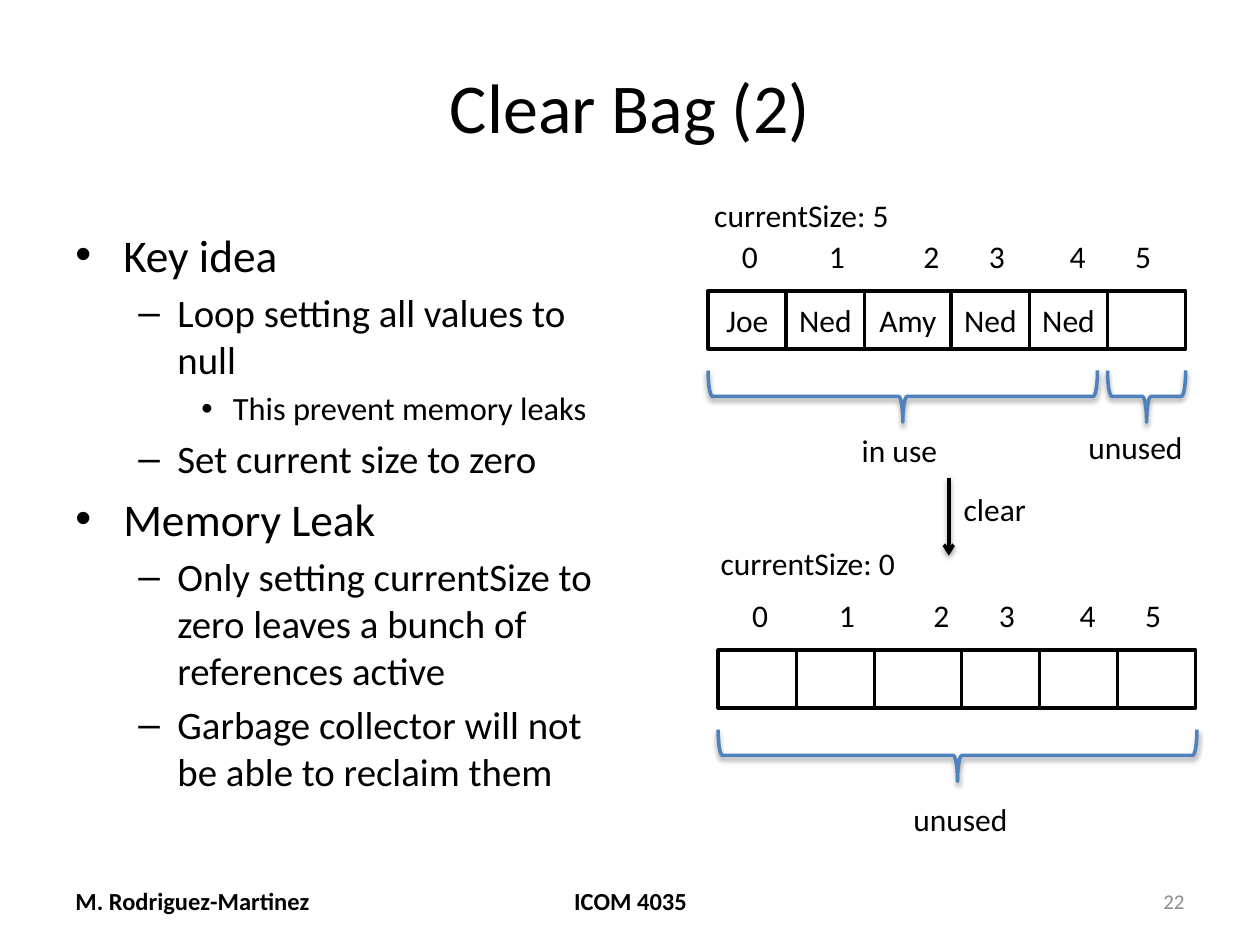
from itertools import accumulate

from lxml import etree
from pptx import Presentation
from pptx.dml.color import RGBColor
from pptx.enum.shapes import MSO_CONNECTOR, MSO_SHAPE
from pptx.enum.text import MSO_ANCHOR as ANCHOR, PP_ALIGN as ALIGN
from pptx.oxml.ns import qn
from pptx.util import Inches, Pt

BLACK = RGBColor(0, 0, 0)
WHITE = RGBColor(255, 255, 255)
GRAY = RGBColor(0x8C, 0x8C, 0x8C)
BLUE = RGBColor(0x4F, 0x81, 0xBD)

CELL_WIDTHS = [0.62, 0.62, 0.69, 0.62, 0.62, 0.62]
CELL_HEIGHT = 0.46
BRACE_DEPTH = 0.41
INDEX_TABS = [0.69, 1.44, 1.96, 2.6, 3.12]

LEVELS = [
    {"size": 25.9, "indent": 0.38, "hanging": 0.38, "bullet": "•"},
    {"size": 22.2, "indent": 0.81, "hanging": 0.31, "bullet": "–"},
    {"size": 18.5, "indent": 1.25, "hanging": 0.25, "bullet": "•"},
]
OUTLINE = [
    (0, "Key idea"),
    (1, "Loop setting all values to null"),
    (2, "This prevent memory leaks"),
    (1, "Set current size to zero"),
    (0, "Memory Leak"),
    (1, "Only setting currentSize to zero leaves a bunch of references active"),
    (1, "Garbage collector will not be able to reclaim them"),
]


def add_element(parent, tag, **attributes):
    element = etree.SubElement(parent, qn(tag))
    for name, value in attributes.items():
        element.set(name, str(value))
    return element


def write(paragraph, text, size=18, color=BLACK, bold=False, align=ALIGN.LEFT):
    paragraph.alignment = align
    run = paragraph.add_run()
    run.text = text
    run.font.color.rgb = color
    formats = {"name": "Calibri", "size": Pt(size), "bold": bold}
    for name, value in formats.items():
        setattr(run.font, name, value)


def add_text(slide, box, text, anchor=ANCHOR.TOP, wrap=False, **formats):
    shape = slide.shapes.add_textbox(*map(Inches, box))
    shape.text_frame.word_wrap = wrap
    shape.text_frame.vertical_anchor = anchor
    paragraph = shape.text_frame.paragraphs[0]
    write(paragraph, text, **formats)
    return paragraph


def add_shadow(shape):
    effects = add_element(shape.element.spPr, "a:effectLst")
    shadow = add_element(effects, "a:outerShdw", blurRad=Pt(3.1), dist=Pt(1.6),
                         dir=90 * 60000, rotWithShape=0)
    color = add_element(shadow, "a:srgbClr", val=BLACK)
    add_element(color, "a:alpha", val=38000)


def add_cell(slide, box, text):
    shape = slide.shapes.add_shape(MSO_SHAPE.RECTANGLE, *map(Inches, box))
    shape.shadow.inherit = False
    shape.fill.solid()
    shape.fill.fore_color.rgb = WHITE
    shape.line.color.rgb = BLACK
    shape.line.width = Pt(2)
    if text:
        frame = shape.text_frame
        formats = {"margin_left": 0, "margin_right": 0, "word_wrap": False,
                   "vertical_anchor": ANCHOR.MIDDLE}
        for name, value in formats.items():
            setattr(frame, name, value)
        write(frame.paragraphs[0], text, align=ALIGN.CENTER)


def add_brace(slide, left, top, width):
    middle_x, middle_y = left + width / 2, top + BRACE_DEPTH / 2
    shape = slide.shapes.add_shape(
        MSO_SHAPE.LEFT_BRACE,
        Inches(middle_x - BRACE_DEPTH / 2), Inches(middle_y - width / 2),
        Inches(BRACE_DEPTH), Inches(width))
    shape.rotation = 270
    shape.fill.background()
    shape.line.color.rgb = BLUE
    shape.line.width = Pt(2)
    add_shadow(shape)


def add_indices(slide, box):
    text = "\t".join(str(index) for index in range(len(CELL_WIDTHS)))
    paragraph = add_text(slide, box, text)
    tabs = add_element(paragraph._p.get_or_add_pPr(), "a:tabLst")
    for position in INDEX_TABS:
        add_element(tabs, "a:tab", pos=Inches(position), algn="l")


def add_bag(slide, left, top, values, size_label, braces):
    label_left, label_top, label = size_label
    add_text(slide, (label_left, label_top, 1.61, 0.4), label)
    add_indices(slide, (left + 0.17, top - 0.48, 3.48, 0.4))
    offsets = accumulate(CELL_WIDTHS, initial=0)
    for offset, width, value in zip(offsets, CELL_WIDTHS, values):
        add_cell(slide, (left + offset, top, width, CELL_HEIGHT), value)
    for offset, width, label_box, label in braces:
        add_brace(slide, left + offset, top + CELL_HEIGHT + 0.17, width)
        add_text(slide, label_box, label)


def add_outline(slide, box):
    frame = slide.shapes.add_textbox(*map(Inches, box)).text_frame
    frame.word_wrap = True
    for number, (level, text) in enumerate(OUTLINE):
        paragraph = frame.add_paragraph() if number else frame.paragraphs[0]
        style = LEVELS[level]
        paragraph.level = level
        paragraph.space_before = Pt(round(style["size"] * 0.2, 1))
        write(paragraph, text, size=style["size"])
        properties = paragraph._p.get_or_add_pPr()
        properties.set("marL", str(Inches(style["indent"])))
        properties.set("indent", str(-Inches(style["hanging"])))
        add_element(properties, "a:buFont", typeface="Arial")
        add_element(properties, "a:buChar", char=style["bullet"])


def add_clear_step(slide, left, top, height):
    arrow = slide.shapes.add_connector(
        MSO_CONNECTOR.STRAIGHT, Inches(left), Inches(top),
        Inches(left), Inches(top + height))
    arrow.line.color.rgb = BLACK
    arrow.line.width = Pt(2)
    add_element(arrow.line._get_or_add_ln(), "a:tailEnd", type="arrow")
    add_shadow(arrow)
    add_text(slide, (left + 0.02, top + 0.05, 0.7, 0.4), "clear")


def add_footer(slide, top, height):
    parts = [
        (0.5, 2.33, "M. Rodriguez-Martinez", {"size": 14, "bold": True}),
        (3.42, 3.17, "ICOM 4035",
         {"size": 14, "bold": True, "align": ALIGN.CENTER}),
        (7.17, 2.33, "22", {"size": 12, "color": GRAY, "align": ALIGN.RIGHT}),
    ]
    for left, width, text, formats in parts:
        add_text(slide, (left, top, width, height), text,
                 anchor=ANCHOR.MIDDLE, wrap=True, **formats)


def main():
    presentation = Presentation()
    presentation.slide_width = Inches(10)
    presentation.slide_height = Inches(7.5)
    slide = presentation.slides.add_slide(presentation.slide_layouts[6])
    add_text(slide, (0.5, 0.3, 9, 1.07), "Clear Bag (2)",
             anchor=ANCHOR.MIDDLE, wrap=True, size=40, align=ALIGN.CENTER)
    add_outline(slide, (0.5, 1.75, 4.42, 4.95))
    add_footer(slide, 6.95, 0.4)
    add_bag(slide, 5.62, 2.31, ["Joe", "Ned", "Amy", "Ned", "Ned", ""],
            (5.57, 1.51, "currentSize: 5"),
            [(0, 3.09, (6.74, 3.37, 0.81, 0.4), "in use"),
             (3.17, 0.62, (8.54, 3.35, 0.96, 0.4), "unused")])
    add_bag(slide, 5.7, 5.16, [""] * len(CELL_WIDTHS),
            (5.62, 4.27, "currentSize: 0"),
            [(0, 3.8, (7.15, 6.3, 0.96, 0.4), "unused")])
    add_clear_step(slide, 7.53, 3.79, 0.62)
    presentation.save("out.pptx")


if __name__ == "__main__":
    main()
